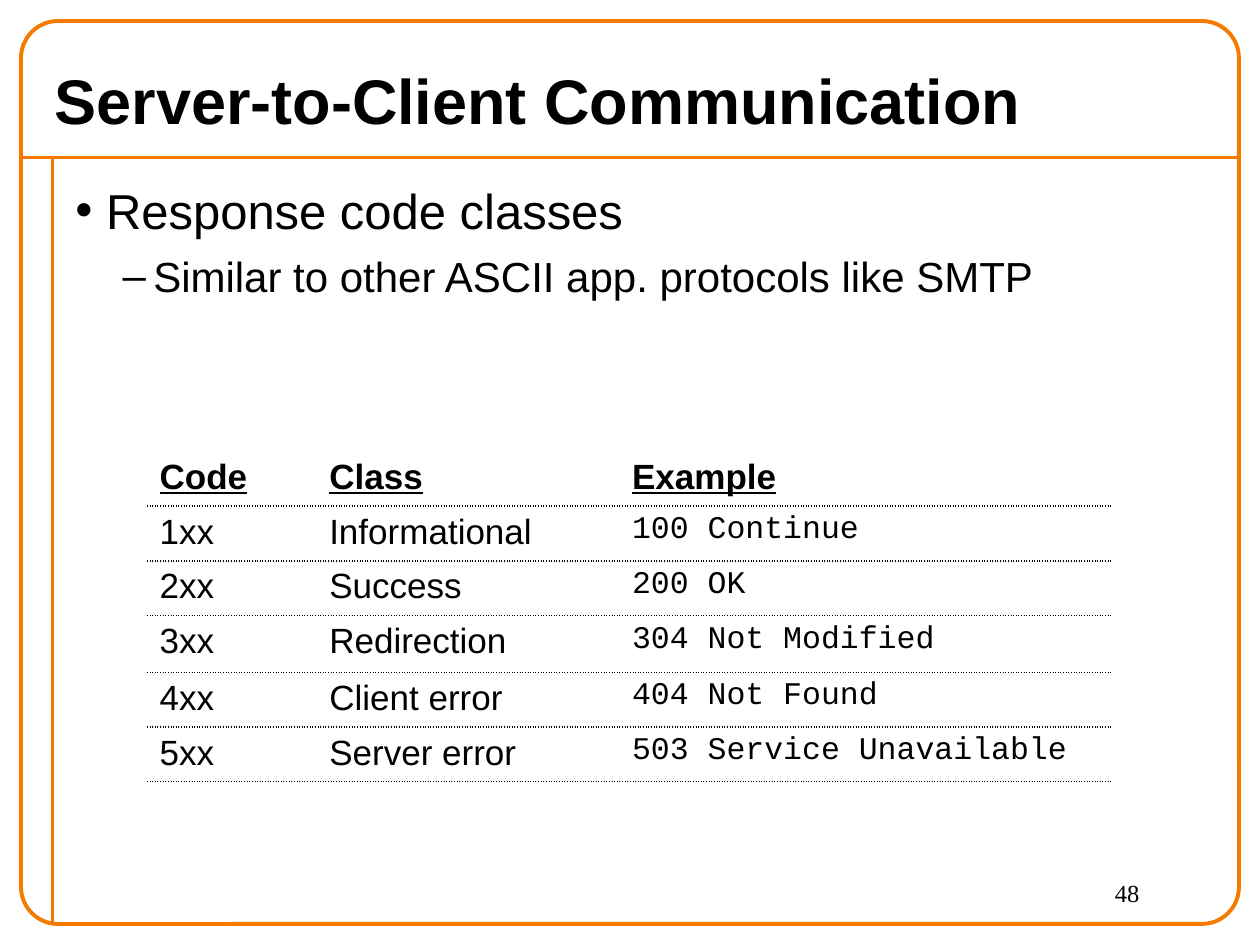
"""Build a slide on server response code classes."""
from lxml.etree import SubElement
from pptx import Presentation
from pptx.dml.color import RGBColor
from pptx.enum.shapes import MSO_CONNECTOR, MSO_SHAPE
from pptx.enum.text import MSO_ANCHOR, PP_ALIGN
from pptx.oxml import parse_xml
from pptx.oxml.ns import nsdecls, qn
from pptx.util import Pt

ORANGE, BLACK = "F47A00", "000000"
BODY = {"name": "Arial", "size": Pt(20), "bold": False}
HEAD = {**BODY, "bold": True, "underline": True}
CODE = {**BODY, "name": "Courier New", "size": Pt(18)}
ROWS = [
    ("Code", "Class", "Example"),
    ("1xx", "Informational", "100 Continue"),
    ("2xx", "Success", "200 OK"),
    ("3xx", "Redirection", "304 Not Modified"),
    ("4xx", "Client error", "404 Not Found"),
    ("5xx", "Server error", "503 Service Unavailable"),
]
WIDTHS = (97, 173, 282)
HEIGHTS = (30, 29, 28, 32.5, 30, 29)


def color(code):
    return RGBColor.from_string(code)


def apply(item, form):
    for key, value in form.items():
        setattr(item, key, value)


class Maker:
    def __init__(self, slide, ink, accent):
        self.slide, self.ink, self.accent = slide, ink, accent

    def stroke(self, shape):
        shape.line.color.rgb = color(self.accent)
        shape.line.width = Pt(2.25)

    def line(self, *ends):
        rule = self.slide.shapes.add_connector(MSO_CONNECTOR.STRAIGHT, *map(Pt, ends))
        self.stroke(rule)
        SubElement(rule._element.spPr, qn("a:effectLst"))

    def frame(self, box, round_by):
        shape = self.slide.shapes.add_shape(MSO_SHAPE.ROUNDED_RECTANGLE, *map(Pt, box))
        shape.adjustments[0] = round_by
        shape.shadow.inherit = False
        shape.fill.background()
        self.stroke(shape)

    def words(self, para, text, form):
        run = para.add_run()
        run.text = text
        apply(run.font, form)
        run.font.color.rgb = color(self.ink)

    def title(self, box, text, form):
        shape = self.slide.shapes.title
        apply(shape, dict(zip(("left", "top", "width", "height"), map(Pt, box))))
        apply(shape.text_frame, {"word_wrap": True, "vertical_anchor": MSO_ANCHOR.MIDDLE})
        para = shape.text_frame.paragraphs[0]
        para.alignment = PP_ALIGN.LEFT
        self.words(para, text, form)

    def text(self, box):
        frame = self.slide.shapes.add_textbox(*map(Pt, box)).text_frame
        frame.word_wrap = True
        return frame

    def label(self, box, text, form):
        self.words(self.text(box).paragraphs[0], text, form)

    def bullets(self, box, items):
        frame = self.text(box)
        for level, (mark, left, gap, size, text) in enumerate(items):
            para = frame.add_paragraph() if level else frame.paragraphs[0]
            apply(para, {"level": level, "line_spacing": 1.1, "space_before": Pt(gap)})
            props = para._p.get_or_add_pPr()
            props.set("marL", str(Pt(left)))
            props.set("indent", str(Pt(-17.5)))
            SubElement(props, qn("a:buFont"), typeface="Arial")
            SubElement(props, qn("a:buChar"), char=mark)
            self.words(para, text, {**BODY, "size": Pt(size)})

    def border(self, cell, sides):
        props = cell._tc.get_or_add_tcPr()
        for place, side in enumerate("LRTB"):
            paint = "<a:noFill/>"
            if side in sides:
                paint = (f'<a:solidFill><a:srgbClr val="{self.ink}"/></a:solidFill>'
                         '<a:prstDash val="sysDot"/>')
            edge = f'<a:ln{side} {nsdecls("a")} w="{Pt(1)}">{paint}</a:ln{side}>'
            props.insert(place, parse_xml(edge))

    def table(self, spot, rows, widths, heights):
        size = sum(widths), sum(heights)
        grid = self.slide.shapes.add_table(
            len(rows), len(widths), *map(Pt, spot + size)).table
        apply(grid, {"first_row": False, "horz_banding": False})
        for col, width in zip(grid.columns, widths):
            col.width = Pt(width)
        for r, (row, height) in enumerate(zip(rows, heights)):
            grid.rows[r].height = Pt(height)
            for c, text in enumerate(row):
                cell = grid.cell(r, c)
                cell.fill.background()
                self.border(cell, "TB" if r else "B")
                form = HEAD if r == 0 else CODE if c == 2 else BODY
                self.words(cell.text_frame.paragraphs[0], text, form)


def main():
    deck = Presentation()
    apply(deck, {"slide_width": Pt(720), "slide_height": Pt(540)})
    make = Maker(deck.slides.add_slide(deck.slide_layouts[5]), BLACK, ORANGE)
    make.line(12, 90, 708, 90)
    make.line(30, 90, 30, 528)
    make.frame((12, 12, 696, 516), 0.041)
    make.label((630, 498, 72, 30), "48", {"name": "Times New Roman", "size": Pt(14)})
    make.title((24, 30, 684, 54), "Server-to-Client Communication",
               {"name": "Arial", "size": Pt(36), "bold": True})
    make.bullets((36, 96, 666, 432), [
        ("•", 17.5, 0, 28, "Response code classes"),
        ("–", 44.5, 4, 24, "Similar to other ASCII app. protocols like SMTP"),
    ])
    make.table((84, 258), ROWS, WIDTHS, HEIGHTS)
    deck.save("out.pptx")


if __name__ == "__main__":
    main()
